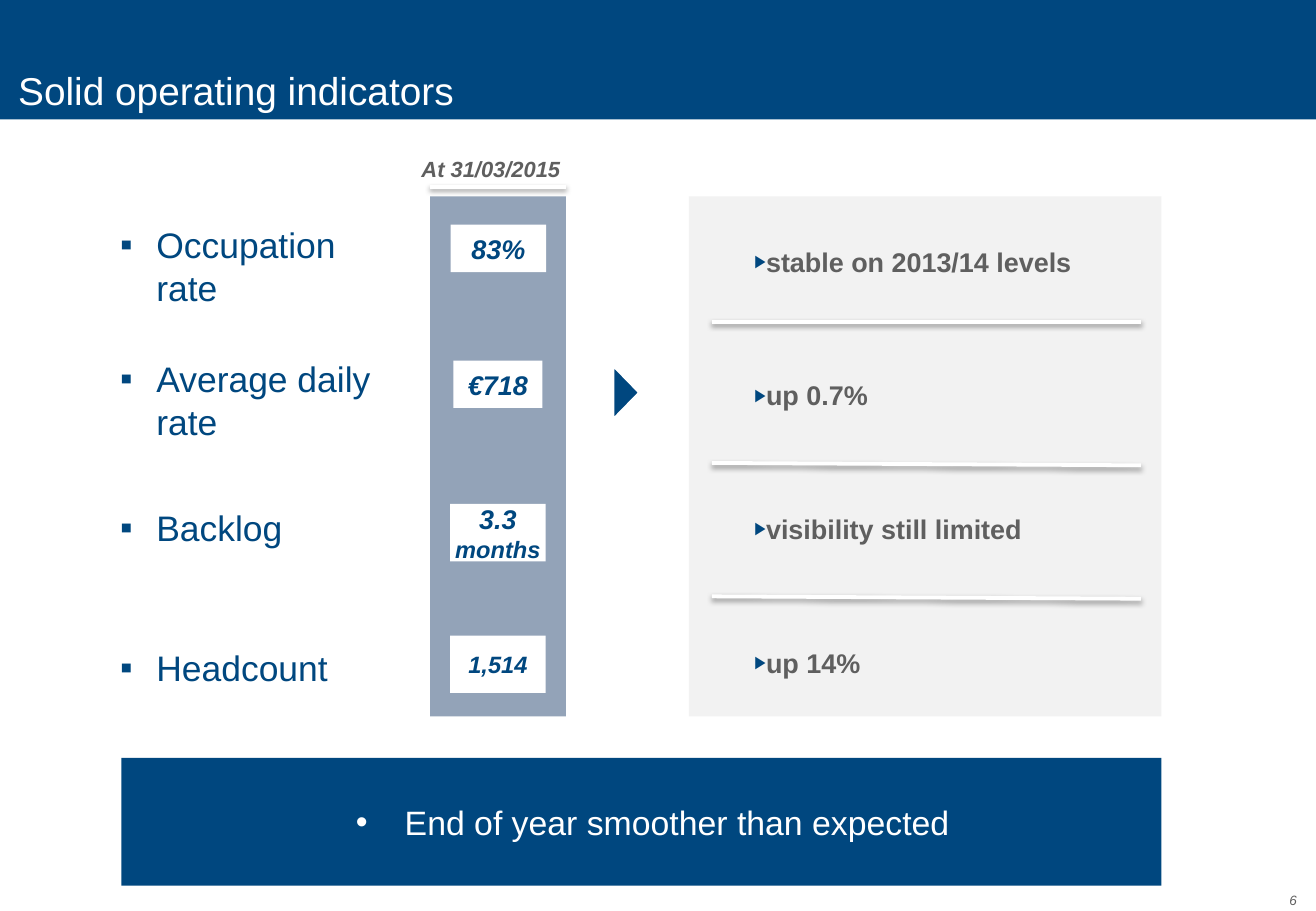
from lxml import etree
from pptx import Presentation
from pptx.dml.color import RGBColor
from pptx.enum.shapes import MSO_CONNECTOR, MSO_SHAPE
from pptx.enum.text import MSO_ANCHOR, PP_ALIGN
from pptx.oxml.ns import qn
from pptx.util import Cm, Pt

RECTANGLE, TRIANGLE = MSO_SHAPE.RECTANGLE, MSO_SHAPE.ISOSCELES_TRIANGLE
LEFT, CENTER, RIGHT = PP_ALIGN.LEFT, PP_ALIGN.CENTER, PP_ALIGN.RIGHT
TOP, MIDDLE, BOTTOM = MSO_ANCHOR.TOP, MSO_ANCHOR.MIDDLE, MSO_ANCHOR.BOTTOM
STRAIGHT = MSO_CONNECTOR.STRAIGHT
NAVY, GREY, WHITE = "00477F", "5F5F5F", "FFFFFF"

prs = Presentation()
prs.slide_width, prs.slide_height = Cm(27.51), Cm(19.05)
slide = prs.slides.add_slide(prs.slide_layouts[6])


def add_block(box, fill=None, preset=RECTANGLE):
    left, top, width, height = [Cm(length) for length in box]
    if fill is None:
        return slide.shapes.add_textbox(left, top, width, height)
    block = slide.shapes.add_shape(preset, left, top, width, height)
    block.shadow.inherit = False
    block.fill.solid()
    block.fill.fore_color.rgb = RGBColor.from_string(fill)
    block.line.fill.background()
    return block


def write(block, lines, color, anchor=TOP, align=LEFT, insets=(0.25, 0.13, 0.25, 0.13),
          bullet=None, indent=(0, 0), bullet_size=100, spacing=None, **style):
    frame = block.text_frame
    frame.word_wrap = True
    frame.vertical_anchor = anchor
    for side, inset in zip(("left", "top", "right", "bottom"), insets):
        setattr(frame, f"margin_{side}", Cm(inset))
    for number, (text, size, space_before) in enumerate(lines):
        paragraph = frame.add_paragraph() if number else frame.paragraphs[0]
        paragraph.alignment = align
        if spacing:
            paragraph.line_spacing = Pt(spacing)
        if space_before:
            paragraph.space_before = Pt(space_before)
        if bullet:
            properties = paragraph._p.get_or_add_pPr()
            properties.set("marL", str(Cm(indent[0])))
            properties.set("indent", str(Cm(indent[1])))
            bullet_color = etree.SubElement(properties, qn("a:buClr"))
            etree.SubElement(bullet_color, qn("a:srgbClr"), val=color if color == WHITE else NAVY)
            etree.SubElement(properties, qn("a:buSzPct"), val=str(bullet_size * 1000))
            etree.SubElement(properties, qn("a:buFont"), typeface="Arial")
            etree.SubElement(properties, qn("a:buChar"), char=bullet)
        run = paragraph.add_run()
        run.text = text
        run.font.color.rgb = RGBColor.from_string(color)
        for name, value in {"name": "Arial", "size": Pt(size), **style}.items():
            setattr(run.font, name, value)


header = add_block((0, 0, 27.51, 2.5), NAVY)
write(header, [("Solid operating indicators", 23, 0)], WHITE, BOTTOM,
      insets=(0.38, 0.2, 0.25, 0.13))

page_number = add_block((25.76, 18.52, 1.6, 0.56))
write(page_number, [("6", 8, 0)], GREY, align=RIGHT, italic=True)

add_block((14.4, 4.11, 9.88, 10.87), "F2F2F2")
add_block((8.99, 4.11, 2.84, 10.87), "93A3B8")

figures = [
    ((9.42, 4.7, 2, 0.99), [("83%", 16, 0)]),
    ((9.48, 7.54, 1.86, 0.99), [("€718", 16, 0)]),
    ((9.41, 10.54, 2, 1.2), [("3.3", 16, 0), ("months", 14, 0)]),
    ((9.41, 13.29, 2, 1.2), [("1,514", 14, 0)]),
]
for box, lines in figures:
    write(add_block(box, WHITE), lines, NAVY, MIDDLE, CENTER, (0, 0, 0, 0),
          bold=True, italic=True)

date = add_block((8.41, 3.12, 3.7, 0.8))
write(date, [("At 31/03/2015", 13, 0)], GREY, align=CENTER, bold=True, italic=True)

pointer = add_block((12.5, 7.92, 1.19, 0.58), NAVY, TRIANGLE)
pointer.rotation = 90
pointer.line.color.rgb = RGBColor.from_string(WHITE)
pointer.line.width = Pt(2.25)

indicators = add_block((2.26, 4.52, 6.27, 10.13))
write(indicators, [("Occupation rate", 21, 0), ("Average daily rate", 21, 28.5),
                   ("Backlog", 21, 37.5), ("Headcount", 21, 57.5)],
      NAVY, bullet="▪", indent=(0.76, -0.76), spacing=25.5)

trends = add_block((14.78, 5, 9.5, 9.9))
write(trends, [("stable on 2013/14 levels", 16, 0), ("up 0.7%", 16, 60),
               ("visibility still limited", 16, 60), ("up 14%", 16, 60)],
      GREY, bullet="▶", indent=(0.23, 0.51), bullet_size=65, bold=True)

conclusion = add_block((2.54, 15.85, 21.74, 2.67), NAVY)
write(conclusion, [("End of year smoother than expected", 20, 0)], WHITE, MIDDLE, CENTER,
      bullet="•", indent=(1.5, -1.02))

separators = [
    (11.83, 3.91, 8.99, 3.91),
    (23.85, 6.73, 14.88, 6.73),
    (23.85, 9.73, 14.88, 9.68),
    (23.85, 12.52, 14.88, 12.47),
]
for ends in separators:
    separator = slide.shapes.add_connector(STRAIGHT, *[Cm(length) for length in ends])
    separator.line.color.rgb = RGBColor.from_string(WHITE)
    separator.line.width = Pt(2.25)
    effects = etree.SubElement(separator._element.spPr, qn("a:effectLst"))
    shadow = etree.SubElement(effects, qn("a:outerShdw"), blurRad=str(Pt(3.1)),
                              dist=str(Pt(1.6)), dir="5400000", rotWithShape="0")
    shadow_color = etree.SubElement(shadow, qn("a:srgbClr"), val="000000")
    etree.SubElement(shadow_color, qn("a:alpha"), val="38000")

prs.save("out.pptx")
